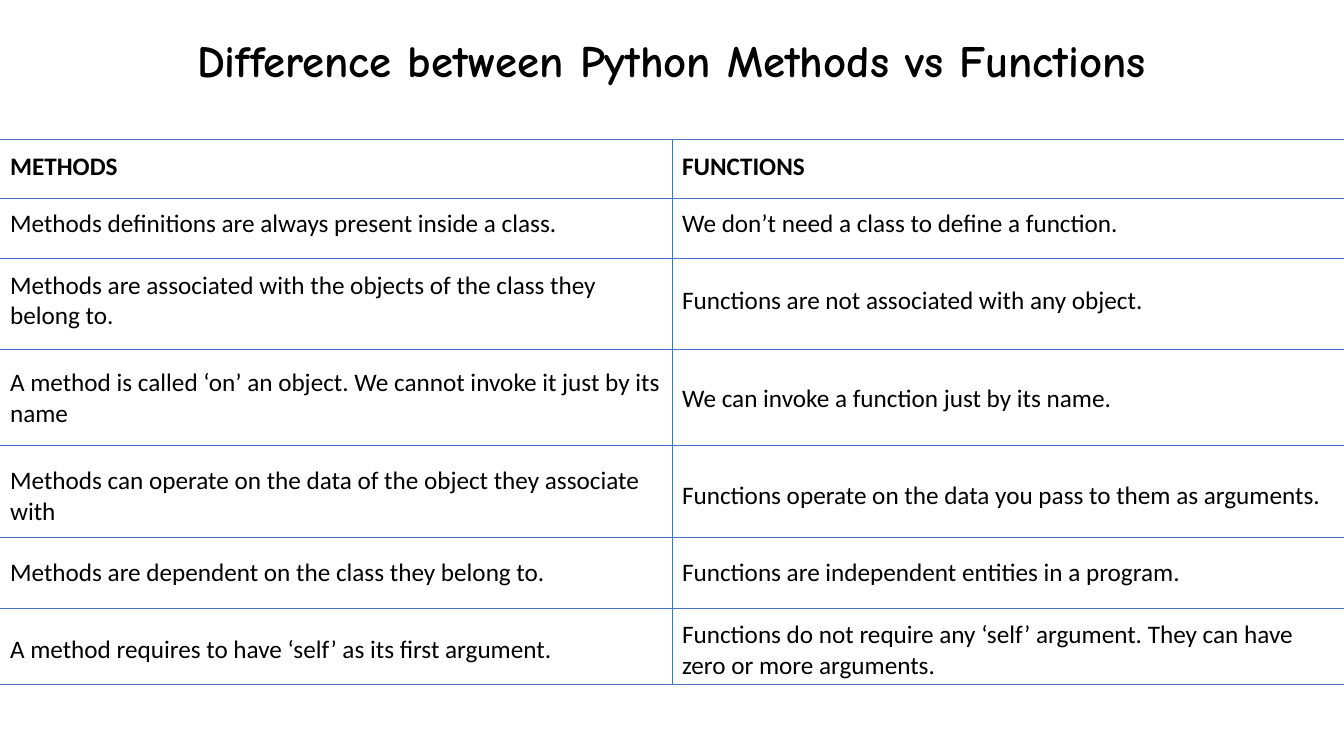
"""Build a slide comparing Python methods with functions."""
from pptx import Presentation, util as u
from pptx.dml import color
from pptx.enum import shapes, text
from pptx.oxml import ns, xmlchemy

PX = 9525
WIDTH, HEIGHT = 1280, 720
TABLE_TOP = 132
SHORT, TALL = 54, 93
BLACK, BLUE = "000000", "4472C4"
RULES = (133, 189, 246, 333, 424, 512, 579, 652)
ROWS = (
    (SHORT, "METHODS", "FUNCTIONS"),
    (SHORT, "Methods definitions are always present inside a class.",
     "We don’t need a class to define a function."),
    (TALL, "Methods are associated with the objects of the class they belong to.",
     "Functions are not associated with any object."),
    (TALL, "A method is called ‘on’ an object. We cannot invoke it just by its name",
     "We can invoke a function just by its name."),
    (TALL, "Methods can operate on the data of the object they associate with",
     "Functions operate on the data you pass to them as arguments."),
    (SHORT, "Methods are dependent on the class they belong to.",
     "Functions are independent entities in a program."),
    (TALL, "A method requires to have ‘self’ as its first argument.",
     "Functions do not require any ‘self’ argument. They can have zero or more arguments."),
)


def px(*lengths):
    return [u.Emu(n * PX) for n in lengths]


def rgb(value):
    return color.RGBColor.from_string(value)


def style(p, name, size, bold):
    p.font.name, p.font.size, p.font.bold = name, u.Pt(size), bold
    p.font.color.rgb = rgb(BLACK)


def add_title(s, words):
    sp = s.shapes.title
    sp.left, sp.top, sp.width, sp.height = px(0, 26, WIDTH, 61)
    tf = sp.text_frame
    tf.text = words
    tf.word_wrap = True
    tf.auto_size = text.MSO_AUTO_SIZE.SHAPE_TO_FIT_TEXT
    tf.vertical_anchor = text.MSO_ANCHOR.MIDDLE
    p = tf.paragraphs[0]
    p.alignment = text.PP_ALIGN.CENTER
    style(p, "Comic Neue", 32, True)


def add_comparison(s, rows):
    height = sum(row[0] for row in rows)
    table = s.shapes.add_table(len(rows), 2, *px(0, TABLE_TOP, WIDTH, height)).table
    table.first_row = table.horz_banding = False
    for i, (row_height, *words) in enumerate(rows):
        table.rows[i].height = px(row_height)[0]
        for j, word in enumerate(words):
            cell = table.cell(i, j)
            cell.fill.background()
            cell.vertical_anchor = text.MSO_ANCHOR.MIDDLE
            cell.text = word
            style(cell.text_frame.paragraphs[0], "Calibri", 18, i == 0)


def add_rule(s, x1, y1, x2, y2):
    rule = s.shapes.add_connector(shapes.MSO_CONNECTOR.STRAIGHT, *px(x1, y1, x2, y2))
    rule.line.color.rgb = rgb(BLUE)
    rule.line.width = u.Pt(0.5)
    rule._element.spPr.append(xmlchemy.OxmlElement("a:effectLst"))


def main():
    prs = Presentation()
    prs.slide_width, prs.slide_height = px(WIDTH, HEIGHT)
    s = prs.slides.add_slide(prs.slide_layouts[5])
    add_comparison(s, ROWS)
    add_title(s, "Difference between Python Methods vs Functions")
    for y in RULES:
        add_rule(s, 0, y, WIDTH, y)
    add_rule(s, WIDTH // 2, TABLE_TOP, WIDTH // 2, 651)
    prs.save("out.pptx")


if __name__ == "__main__":
    main()
